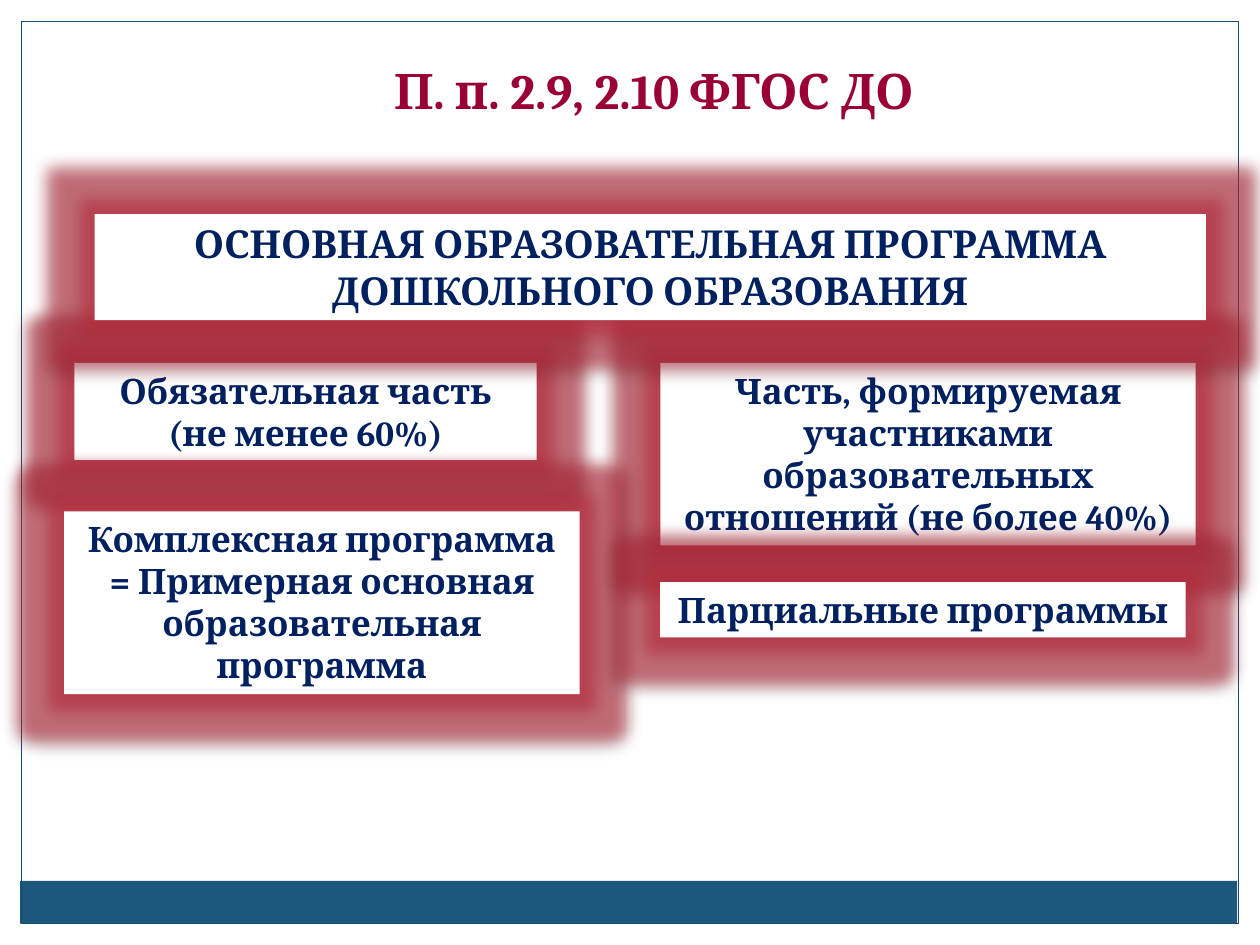
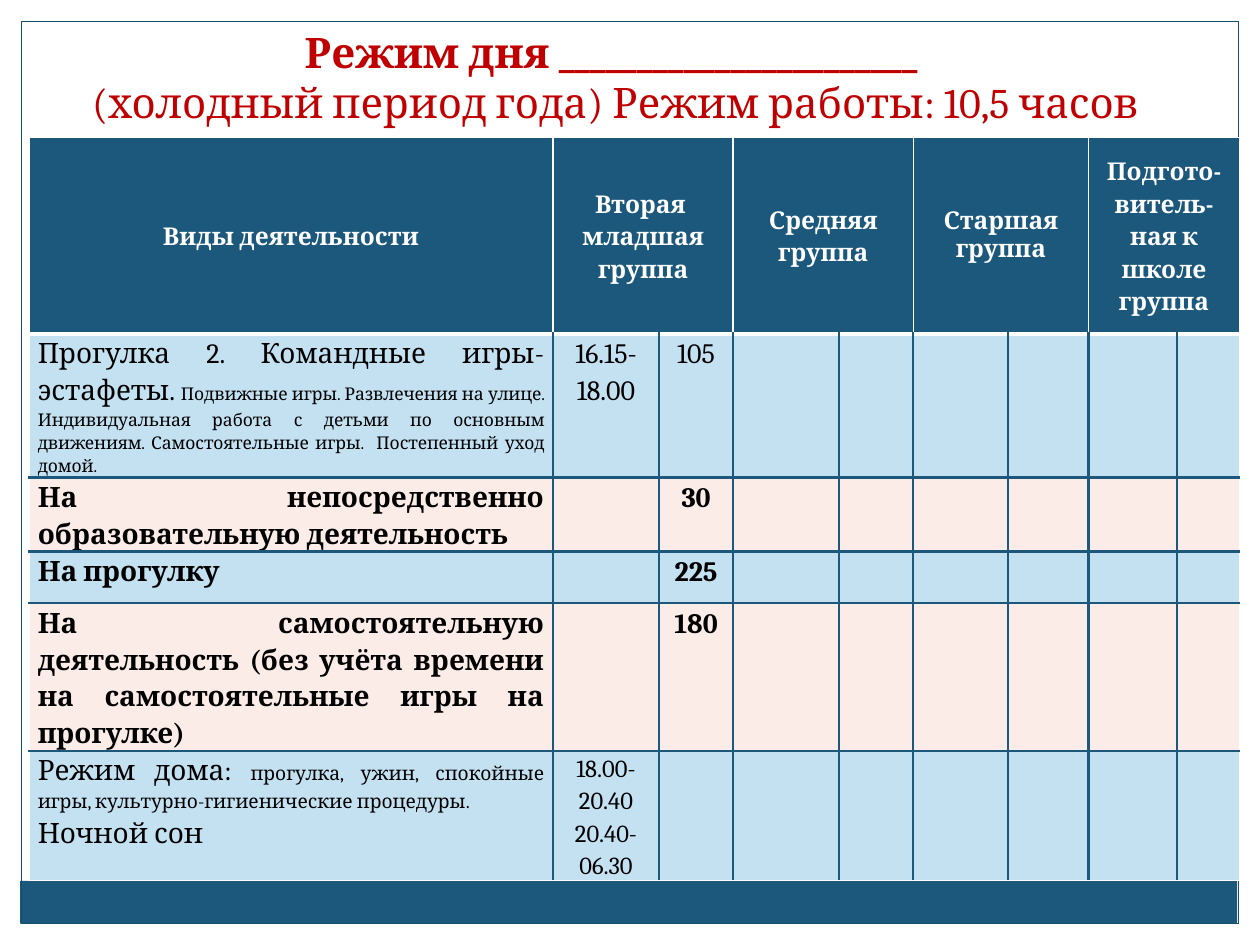
from lxml.etree import SubElement
from pptx import Presentation
from pptx.dml.color import RGBColor
from pptx.enum.shapes import MSO_SHAPE
from pptx.enum.text import MSO_ANCHOR, MSO_AUTO_SIZE, PP_ALIGN
from pptx.oxml.ns import qn
from pptx.util import Inches, Pt

WHITE = RGBColor(0xFF, 0xFF, 0xFF)
BLACK = RGBColor(0x00, 0x00, 0x00)
BLUE = RGBColor(0x1B, 0x58, 0x7C)
FRAME_BLUE = RGBColor(0x18, 0x4E, 0x6D)
NAVY = RGBColor(0x00, 0x20, 0x60)
CRIMSON = RGBColor(0x99, 0x00, 0x33)
RED = RGBColor(0xC0, 0x00, 0x00)
GLOW_RED = RGBColor(0xB7, 0x2B, 0x3C)
PALE_BLUE = RGBColor(0xC4, 0xE1, 0xF2)
PALE_PINK = RGBColor(0xFC, 0xEC, 0xE7)
FONT = "Cambria"

presentation = Presentation()
presentation.slide_width, presentation.slide_height = Inches(10), Inches(7.5)


def area(left, top, width, height):
    """Turn percentages of the slide into a position and a size."""
    across, down = presentation.slide_width / 100, presentation.slide_height / 100
    return round(left * across), round(top * down), round(width * across), round(height * down)


def write(text_frame, paragraphs, color, alignment, spacing=1.0):
    """Fill a text frame; each paragraph is a list of (text, size, bold) runs."""
    for index, runs in enumerate(paragraphs):
        paragraph = text_frame.add_paragraph() if index else text_frame.paragraphs[0]
        paragraph.alignment = alignment
        paragraph.line_spacing = spacing
        for text, size, bold in runs:
            run = paragraph.add_run()
            run.text = text
            run.font.name, run.font.size, run.font.bold = FONT, Pt(size), bold
            run.font.color.rgb = color


# Slides with their titles
layout = presentation.slide_layouts[5]
titles = [
    ((4.7, 2.8, 95.3, 10.53), MSO_ANCHOR.BOTTOM, CRIMSON, 0.9,
     [[("П. п. 2.9, 2.10 ФГОС ДО ", 28, True)]]),
    ((0, 2.13, 97.7, 12.13), MSO_ANCHOR.TOP, RED, 1.0,
     [[("Режим дня _______________________ ", 24, True)],
      [("(холодный период года) Режим работы: 10,5 часов", 24, False)]]),
]
for place, anchor, color, spacing, paragraphs in titles:
    slide = presentation.slides.add_slide(layout)
    title = slide.shapes.title
    title.left, title.top, title.width, title.height = area(*place)
    title.text_frame.vertical_anchor = anchor
    title.text_frame.auto_size = MSO_AUTO_SIZE.NONE
    write(title.text_frame, paragraphs, color, PP_ALIGN.CENTER, spacing)
program_slide, schedule_slide = presentation.slides

# Margins, bottom band and frame, moved to the shared layout
frame_parts = [
    ((0, 0, 100, 2.27), WHITE, None),
    ((98.3, 0, 1.7, 100), WHITE, None),
    ((0, 0, 1.7, 100), WHITE, None),
    ((1.6, 93.2, 96.6, 4.53), BLUE, None),
    ((1.7, 2.27, 96.6, 95.47), None, FRAME_BLUE),
]
for place, fill, line in frame_parts:
    shape = program_slide.shapes.add_shape(MSO_SHAPE.RECTANGLE, *area(*place))
    shape.shadow.inherit = False
    if fill:
        shape.fill.solid()
        shape.fill.fore_color.rgb = fill
        shape.line.fill.background()
    else:
        shape.fill.background()
        shape.line.color.rgb = line
        shape.line.width = Pt(0.75)
    layout.shapes.element.append(shape.element)

# Program structure: glowing boxes
boxes = [
    ((5.9, 38.4, 36.7, 10.27), 20, "Обязательная часть (не менее 60%)"),
    ((52.4, 38.4, 42.5, 19.33), 20,
     "Часть, формируемая участниками образовательных отношений (не более 40%)"),
    ((7.5, 22.67, 88.2, 11.2), 22,
     "ОСНОВНАЯ ОБРАЗОВАТЕЛЬНАЯ ПРОГРАММА ДОШКОЛЬНОГО ОБРАЗОВАНИЯ"),
    ((5.1, 54.13, 40.9, 19.33), 20,
     "Комплексная программа = Примерная основная образовательная программа"),
    ((52.4, 61.6, 41.7, 5.87), 20, "Парциальные программы"),
]
effects = [
    ("a:glow", {"rad": Pt(18)}, GLOW_RED, 60),
    ("a:outerShdw", {"blurRad": Pt(3.5), "dist": Pt(2.2), "dir": 5400000, "rotWithShape": 0},
     BLACK, 32),
]
for place, size, text in boxes:
    shape = program_slide.shapes.add_shape(MSO_SHAPE.RECTANGLE, *area(*place))
    shape.fill.solid()
    shape.fill.fore_color.rgb = WHITE
    shape.line.fill.background()
    shape.shadow.inherit = False
    effect_list = shape.element.spPr.find(qn("a:effectLst"))
    for tag, attributes, color, opacity in effects:
        effect = SubElement(effect_list, qn(tag))
        for name, value in attributes.items():
            effect.set(name, str(int(value)))
        effect_color = SubElement(effect, qn("a:srgbClr"), val=str(color))
        SubElement(effect_color, qn("a:alpha"), val=str(opacity * 1000))
    shape.text_frame.word_wrap = True
    shape.text_frame.auto_size = MSO_AUTO_SIZE.SHAPE_TO_FIT_TEXT
    shape.text_frame.vertical_anchor = MSO_ANCHOR.TOP
    write(shape.text_frame, [[(text, size, True)]], NAVY, PP_ALIGN.CENTER)

# Daily schedule: table grid
column_widths = [4.16, 0.84, 0.59, 0.84, 0.59, 0.75, 0.64, 0.7, 0.5]
row_heights = [1.56, 0.95, 0.58, 0.41, 1.17, 1.02]
last_row, last_column = len(row_heights) - 1, len(column_widths) - 1
table = schedule_slide.shapes.add_table(
    len(row_heights), len(column_widths), *area(2.3, 14.53, 96.1, 75.87)).table
table.horz_banding = False
for column, width in zip(table.columns, column_widths):
    column.width = Inches(width)
for row, height in zip(table.rows, row_heights):
    row.height = Inches(height)

# Cell fills, margins and borders
for row in range(last_row + 1):
    for column in range(last_column + 1):
        cell = table.cell(row, column)
        cell.margin_left = cell.margin_right = Inches(0.07)
        cell.margin_top = cell.margin_bottom = 0
        white_sides = {
            "L": row == 0 or column == 0,
            "R": row == 0 or column == last_column,
            "T": row <= 1,
            "B": row in (0, last_row),
        }
        for side, is_white in white_sides.items():
            width = 3 if row == 0 and side == "B" else 1 if is_white else 1.5
            border = SubElement(cell._tc.get_or_add_tcPr(), qn(f"a:ln{side}"), w=str(Pt(width)))
            border_fill = SubElement(border, qn("a:solidFill"))
            SubElement(border_fill, qn("a:srgbClr"), val=str(WHITE if is_white else BLUE))
        cell.fill.solid()
        cell.fill.fore_color.rgb = BLUE if row == 0 else PALE_BLUE if row % 2 else PALE_PINK

# Header row: every age group spans two columns
headers = [
    (0, 1.15, ["Виды деятельности"]),
    (1, 1.15, ["Вторая ", "младшая группа"]),
    (3, 1.15, ["Средняя группа"]),
    (5, 1.0, ["Старшая группа"]),
    (7, 1.15, ["Подгото-витель-ная к школе группа"]),
]
for column, spacing, lines in headers:
    cell = table.cell(0, column)
    if column:
        cell.merge(table.cell(0, column + 1))
    if column >= 5:
        cell.margin_left = cell.margin_right = Inches(0.1)
        cell.margin_top = cell.margin_bottom = Inches(0.05)
    cell.vertical_anchor = MSO_ANCHOR.MIDDLE
    write(cell.text_frame, [[(line, 14, True)] for line in lines],
          WHITE, PP_ALIGN.CENTER, spacing)

# Activities, their times and minutes
activities = [
    ([[("Прогулка 2. Командные игры-эстафеты. ", 16, False),
       ("Подвижные игры. Развлечения на улице. Индивидуальная работа с детьми по основным "
        "движениям. Самостоятельные игры.  Постепенный уход домой.", 10, False)]],
     [[("16.15-18.00", 16, False)]], [[("105", 16, False)]]),
    ([[("На непосредственно образовательную деятельность", 16, True)]],
     [], [[("30", 16, True)]]),
    ([[("На прогулку", 16, True)]], [], [[("225", 16, True)]]),
    ([[("На самостоятельную деятельность (без учёта времени на самостоятельные игры "
        "на прогулке)", 16, True)]], [], [[("180", 16, True)]]),
    ([[("Режим дома: ", 16, False),
       ("прогулка, ужин, спокойные игры, культурно-гигиенические процедуры. ", 11, False)],
      [("Ночной сон", 16, False)]],
     [[("18.00-20.40", 14, False)], [("20.40-06.30", 14, False)]], []),
]
for row, contents in enumerate(activities, start=1):
    for column, paragraphs in enumerate(contents):
        alignment = PP_ALIGN.CENTER if column else PP_ALIGN.JUSTIFY
        write(table.cell(row, column).text_frame, paragraphs, BLACK, alignment, 1.15)

presentation.save("out.pptx")
